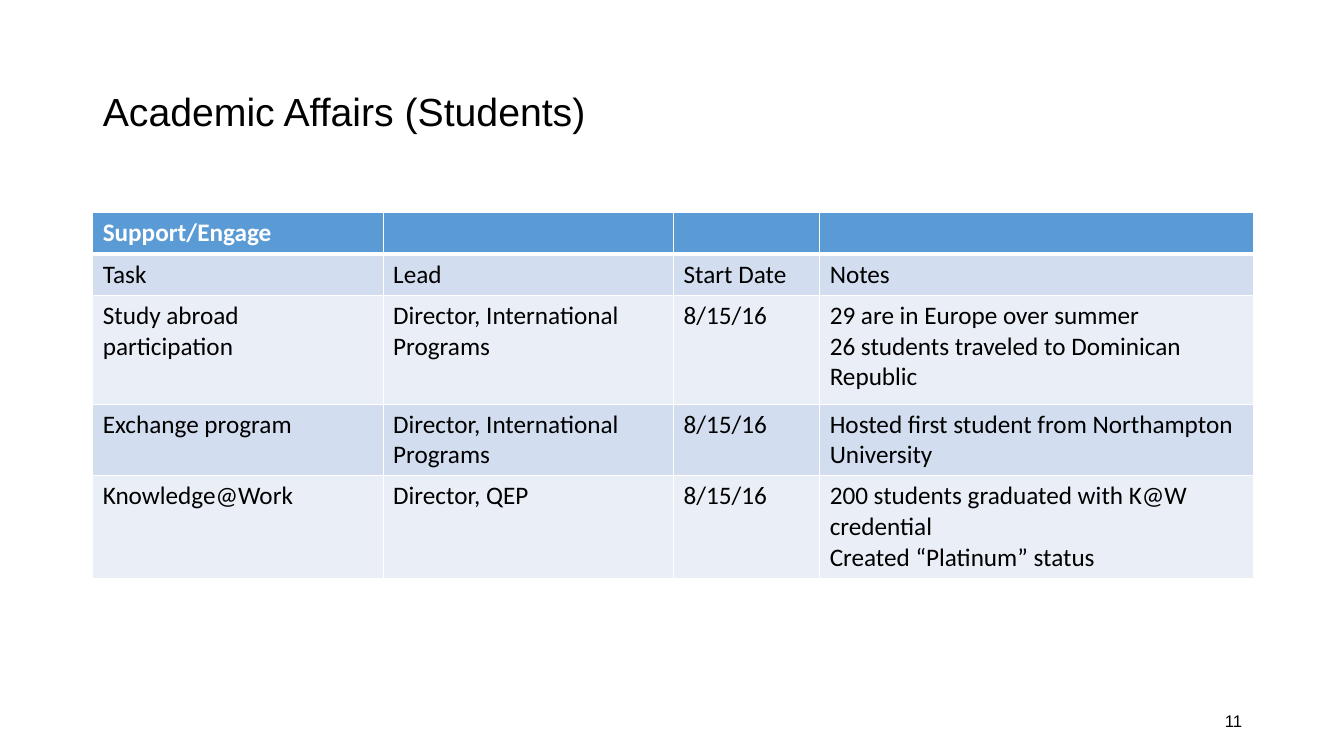
from lxml.etree import SubElement
from pptx import Presentation
from pptx.dml.color import RGBColor
from pptx.enum.text import MSO_ANCHOR, PP_ALIGN
from pptx.oxml.ns import qn
from pptx.util import Inches, Pt

COLORS = {"text": "000000", "white": "FFFFFF", "header": "5B9BD5",
          "odd": "D2DEEF", "even": "EAEFF7"}
LEFT, WIDTH = 0.92, 11.5
COLUMNS = [2.88, 2.88, 1.45, 4.3]
HEIGHTS = [0.41, 0.41, 1.08, 0.7, 1]
ROWS = [
    ["Support/Engage", "", "", ""],
    ["Task", "Lead", "Start Date", "Notes"],
    ["Study abroad participation", "Director, International Programs", "8/15/16",
     "29 are in Europe over summer\n26 students traveled to Dominican Republic"],
    ["Exchange program", "Director, International Programs", "8/15/16",
     "Hosted first student from Northampton University"],
    ["Knowledge@Work", "Director, QEP", "8/15/16",
     "200 students graduated with K@W credential\nCreated “Platinum” status"],
]


def format_text(frame, font_name, size, color="text", bold=False):
    for para in frame.paragraphs:
        for span in para.runs:
            span.font.name = font_name
            span.font.size = Pt(size)
            span.font.bold = bold
            span.font.color.rgb = RGBColor.from_string(COLORS[color])


def set_border(cell, side, points):
    line = SubElement(cell._tc.get_or_add_tcPr(), qn(f"a:ln{side}"), w=str(Pt(points)))
    fill = SubElement(line, qn("a:solidFill"))
    SubElement(fill, qn("a:srgbClr"), val=COLORS["white"])


deck = Presentation()
deck.slide_width, deck.slide_height = Inches(13.33), Inches(7.5)
page = deck.slides.add_slide(deck.slide_layouts[5])

# Title
title = page.shapes.title
title.left, title.top = Inches(LEFT), Inches(0.4)
title.width, title.height = Inches(WIDTH), Inches(1.45)
title.text_frame.text = "Academic Affairs (Students)"
title.text_frame.vertical_anchor = MSO_ANCHOR.MIDDLE
title.text_frame.paragraphs[0].alignment = PP_ALIGN.LEFT
title.text_frame.paragraphs[0].line_spacing = 0.9
format_text(title.text_frame, "Arial", 28)

# Task table
table = page.shapes.add_table(len(ROWS), len(COLUMNS), Inches(LEFT), Inches(2.11),
                              Inches(WIDTH), Inches(sum(HEIGHTS))).table
for column, width in zip(table.columns, COLUMNS):
    column.width = Inches(width)
for row, height in zip(table.rows, HEIGHTS):
    row.height = Inches(height)

for r, texts in enumerate(ROWS):
    is_header = r == 0
    band = "header" if is_header else "odd" if r % 2 else "even"
    for c, text in enumerate(texts):
        cell = table.cell(r, c)
        cell.text_frame.text = text
        format_text(cell.text_frame, "Calibri", 18,
                    "white" if is_header else "text", is_header)
        for side in "LRTB":
            thick = (r, side) in [(0, "B"), (1, "T")]
            set_border(cell, side, 3 if thick else 1)
        cell.fill.solid()
        cell.fill.fore_color.rgb = RGBColor.from_string(COLORS[band])

# Page number
number = page.shapes.add_textbox(Inches(LEFT + WIDTH - 3), Inches(6.95),
                                 Inches(3), Inches(0.4))
number.text_frame.word_wrap = True
number.text_frame.vertical_anchor = MSO_ANCHOR.MIDDLE
number.text_frame.text = "11"
number.text_frame.paragraphs[0].alignment = PP_ALIGN.RIGHT
format_text(number.text_frame, "Arial", 12)

deck.save("out.pptx")
